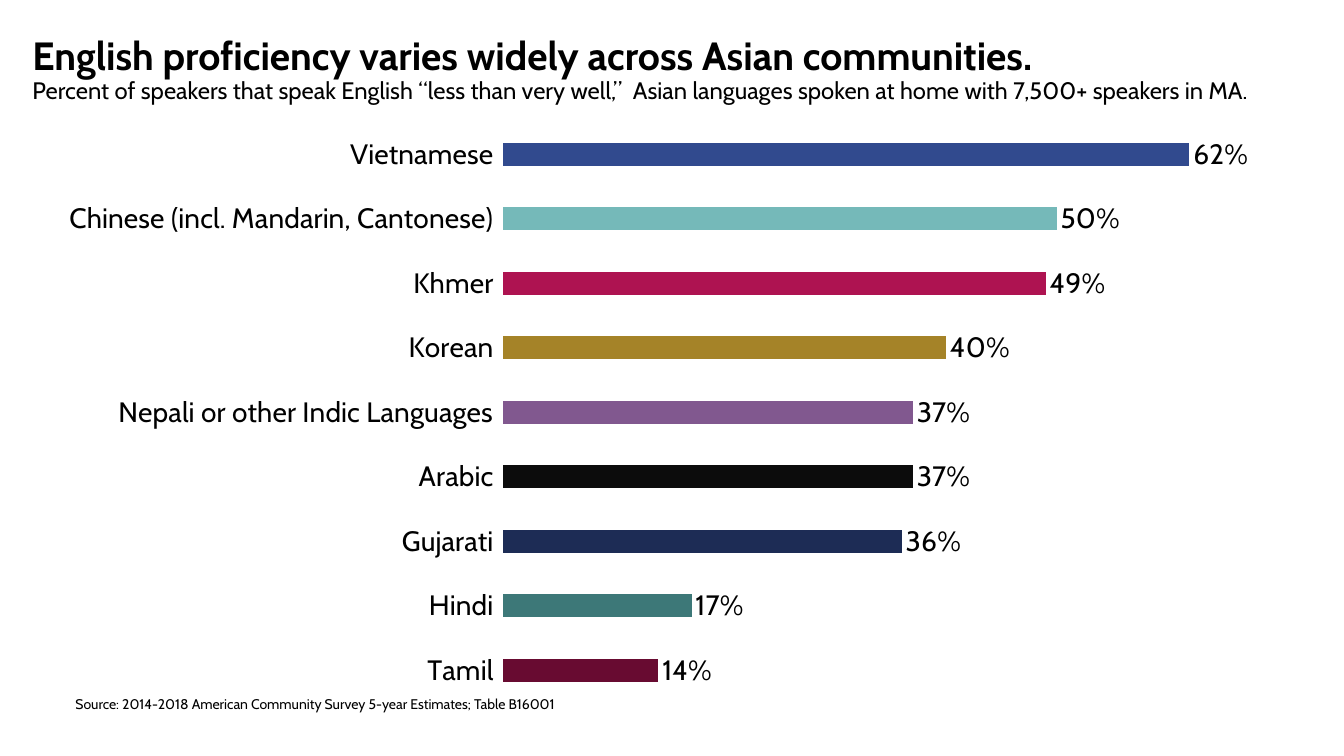
from lxml.etree import SubElement
from pptx import Presentation
from pptx.chart.data import CategoryChartData
from pptx.dml.color import RGBColor
from pptx.enum.chart import XL_CHART_TYPE, XL_LABEL_POSITION, XL_TICK_MARK
from pptx.enum.text import MSO_ANCHOR, MSO_AUTO_SIZE, PP_ALIGN
from pptx.oxml.ns import qn
from pptx.util import Emu, Pt

EMU_PER_PX = 9144  # 100 px to the inch
FONT = "Cabin"
COLORS = {
    "text": "000000", "white": "FFFFFF",
    "blue": "314A8E", "aqua": "75B9B9", "crimson": "AE1351",
    "gold": "A58328", "purple": "81588F", "black": "0C0C0C",
    "navy": "1D2C55", "teal": "3D7878", "wine": "680B31",
}
LANGUAGES = [
    ("Vietnamese", 0.62, "blue"),
    ("Chinese (incl. Mandarin, Cantonese)", 0.50, "aqua"),
    ("Khmer", 0.49, "crimson"),
    ("Korean", 0.40, "gold"),
    ("Nepali or other Indic Languages", 0.37, "purple"),
    ("Arabic", 0.37, "black"),
    ("Gujarati", 0.36, "navy"),
    ("Hindi", 0.17, "teal"),
    ("Tamil", 0.14, "wine"),
]
PLOT_AREA = {"x": 0.366, "y": 0.02, "w": 0.616, "h": 0.96}  # share of the chart


def px(n):
    return Emu(n * EMU_PER_PX)


def color(name):
    return RGBColor.from_string(COLORS[name])


class SlideBuilder:
    def __init__(self, prs):
        self.s = prs.slides.add_slide(prs.slide_layouts[5])

    def style(self, font, size, bold=False):
        font.name, font.size, font.bold = FONT, Pt(size), bold
        font.color.rgb = color("text")

    def title(self, heading, subtitle, x, y, w, h):
        sp = self.s.shapes.title
        sp.left, sp.top, sp.width, sp.height = map(px, (x, y, w, h))
        tf = sp.text_frame
        tf.auto_size = MSO_AUTO_SIZE.NONE
        tf.vertical_anchor = MSO_ANCHOR.BOTTOM
        p = tf.paragraphs[0]
        p.text = heading + "\v" + subtitle
        p.alignment = PP_ALIGN.LEFT
        p.line_spacing = 0.9
        p.space_before = Pt(6)
        self.style(p.runs[0].font, 28.1, bold=True)
        self.style(p.runs[1].font, 17)

    def text(self, text, size, x, y, w, h):
        tf = self.s.shapes.add_textbox(*map(px, (x, y, w, h))).text_frame
        tf.word_wrap = True
        tf.text = text
        self.style(tf.paragraphs[0].runs[0].font, size)

    def bar_chart(self, rows, x, y, w, h):
        data = CategoryChartData(number_format="0%")
        data.categories = [name for name, _, _ in rows]
        data.add_series("Series 1", [value for _, value, _ in rows])
        chart = self.s.shapes.add_chart(
            XL_CHART_TYPE.BAR_CLUSTERED, *map(px, (x, y, w, h)), data).chart
        chart.has_legend = chart.has_title = False
        self.style(chart.font, 10)

        # Axes
        cat = chart.category_axis
        cat.reverse_order = True
        cat.major_tick_mark = XL_TICK_MARK.OUTSIDE
        self.style(cat.tick_labels.font, 20)
        val = chart.value_axis
        val.visible = False
        val.minimum_scale, val.maximum_scale = 0, 0.7
        for line in (cat.format.line, val.major_gridlines.format.line):
            line.color.rgb = color("white")
            line.width = Pt(0.75)

        # Bars and their labels
        plot = chart.plots[0]
        plot.gap_width = 182
        plot.vary_by_categories = False
        for i, (_, _, fill_name) in enumerate(rows):
            fill = plot.series[0].points[i].format.fill
            fill.solid()
            fill.fore_color.rgb = color(fill_name)
        plot.has_data_labels = True
        labels = plot.data_labels
        labels.show_value = True
        labels.position = XL_LABEL_POSITION.OUTSIDE_END
        labels.number_format, labels.number_format_is_linked = "0%", False
        self.style(labels.font, 20)
        self.place_plot(chart)

    def place_plot(self, chart):
        area = chart.element.find(".//" + qn("c:plotArea"))
        layout = area.find(qn("c:layout"))
        if layout is None:
            layout = SubElement(area, qn("c:layout"))
            area.insert(0, layout)
        manual = SubElement(layout, qn("c:manualLayout"))
        SubElement(manual, qn("c:layoutTarget")).set("val", "inner")
        for mode in ("xMode", "yMode"):
            SubElement(manual, qn("c:" + mode)).set("val", "edge")
        for side, share in PLOT_AREA.items():
            SubElement(manual, qn("c:" + side)).set("val", str(share))


def main():
    prs = Presentation()
    prs.slide_width, prs.slide_height = px(1333), px(750)
    slide = SlideBuilder(prs)

    # Chart
    slide.bar_chart(LANGUAGES, 43, 109, 1247, 600)

    # Title and source note
    slide.title(
        "English proficiency varies widely across Asian communities.",
        "Percent of speakers that speak English “less than very well,”  "
        "Asian languages spoken at home with 7,500+ speakers in MA.",
        22, 15, 1290, 94)
    slide.text(
        "Source: 2014-2018 American Community Survey 5-year Estimates; "
        "Table B16001", 10, 65, 685, 584, 27)

    prs.save("out.pptx")


if __name__ == "__main__":
    main()
